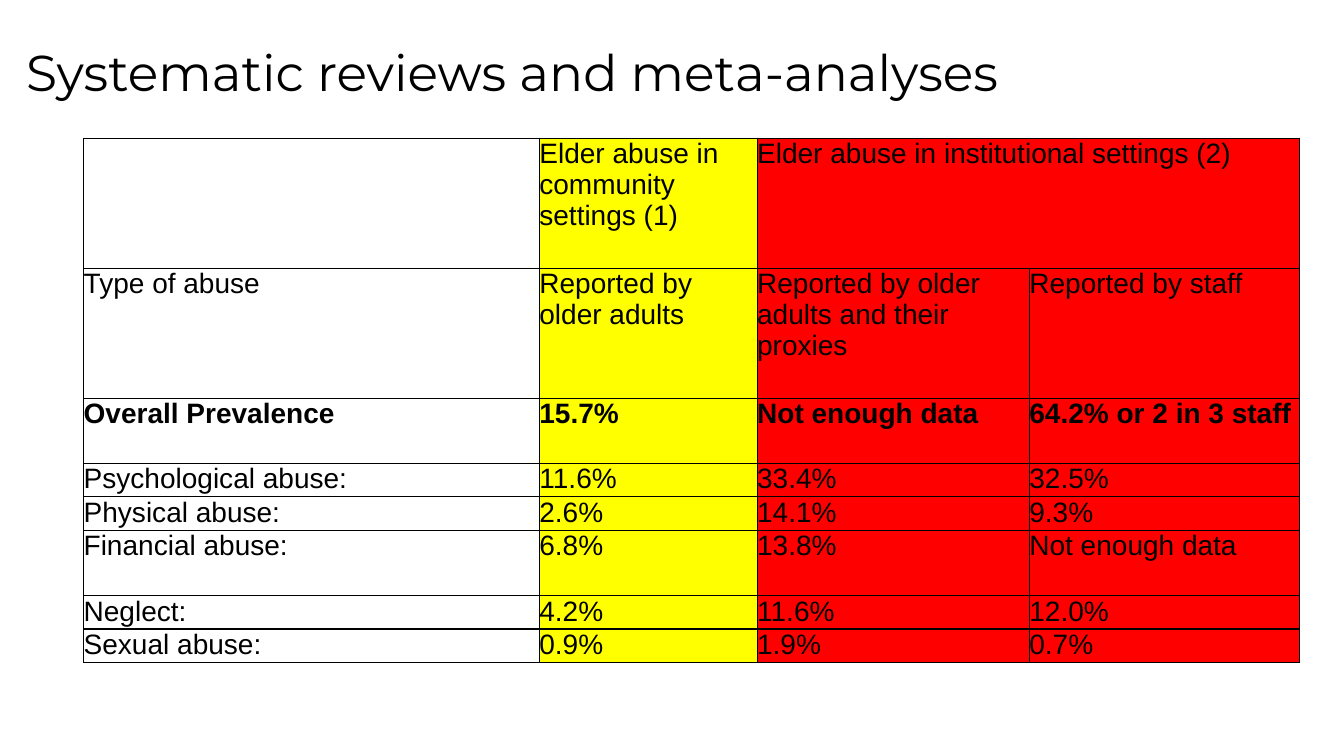
"""Build the slide comparing elder abuse prevalence in community and institutional settings."""
from lxml import etree
from pptx import Presentation
from pptx.dml.color import RGBColor
from pptx.enum import text
from pptx.oxml import ns
from pptx.util import Inches, Pt


def color(value):
    return RGBColor.from_string(value)


def add_borders(cell, value, width):
    tc_pr = cell._tc.get_or_add_tcPr()
    for side in ("lnL", "lnR", "lnT", "lnB"):
        ln = etree.SubElement(tc_pr, ns.qn(f"a:{side}"), w=str(Pt(width)))
        fill = etree.SubElement(ln, ns.qn("a:solidFill"))
        etree.SubElement(fill, ns.qn("a:srgbClr"), val=value)


prs = Presentation()
prs.slide_width, prs.slide_height = Inches(13.33), Inches(7.5)
s = prs.slides.add_slide(prs.slide_layouts[5])

title = s.shapes.title
title.left, title.top = Inches(0.16), Inches(0.36)
title.width, title.height = Inches(11), Inches(1.31)
tf = title.text_frame
tf.word_wrap = False
tf.auto_size = text.MSO_AUTO_SIZE.NONE
tf.vertical_anchor = text.MSO_ANCHOR.TOP
p = tf.paragraphs[0]
p.alignment = text.PP_ALIGN.LEFT
r = p.add_run()
r.text = "Systematic reviews and meta-analyses"
r.font.name, r.font.size = "Montserrat", Pt(36)
r.font.color.rgb = color("000000")

rows = [
    ("", "Elder abuse in community settings (1)", "Elder abuse in institutional settings (2)", ""),
    ("Type of abuse", "Reported by older adults", "Reported by older adults and their proxies",
     "Reported by staff"),
    ("Overall Prevalence", "15.7%", "Not enough data", "64.2% or 2 in 3 staff"),
    ("Psychological abuse:", "11.6%", "33.4%", "32.5%"),
    ("Physical abuse:", "2.6%", "14.1%", "9.3%"),
    ("Financial abuse:", "6.8%", "13.8%", "Not enough data"),
    ("Neglect:", "4.2%", "11.6%", "12.0%"),
    ("Sexual abuse:", "0.9%", "1.9%", "0.7%"),
]
col_widths = [4.52, 2.16, 2.7, 2.68]
row_heights = [1.29, 1.29, 0.65, 0.33, 0.33, 0.65, 0.33, 0.33]
col_fills = [None, "FFFF00", "FF0000", "FF0000"]

table = s.shapes.add_table(len(rows), len(col_widths), Inches(0.83), Inches(1.37),
                           Inches(12.06), Inches(5.2)).table
table.first_row = table.horz_banding = False
for col, width in zip(table.columns, col_widths):
    col.width = Inches(width)
for row, height in zip(table.rows, row_heights):
    row.height = Inches(height)
table.cell(0, 2).merge(table.cell(0, 3))

for i, labels in enumerate(rows):
    for j, label in enumerate(labels):
        cell = table.cell(i, j)
        cell.margin_left = cell.margin_right = cell.margin_top = cell.margin_bottom = 0
        add_borders(cell, "000000", 1)
        if col_fills[j]:
            cell.fill.solid()
            cell.fill.fore_color.rgb = color(col_fills[j])
        else:
            cell.fill.background()
        if label:
            r = cell.text_frame.paragraphs[0].add_run()
            r.text = label
            r.font.name, r.font.size = "Arial", Pt(20)
            r.font.bold = labels[0] == "Overall Prevalence"
            r.font.color.rgb = color("000000")

prs.save("out.pptx")
